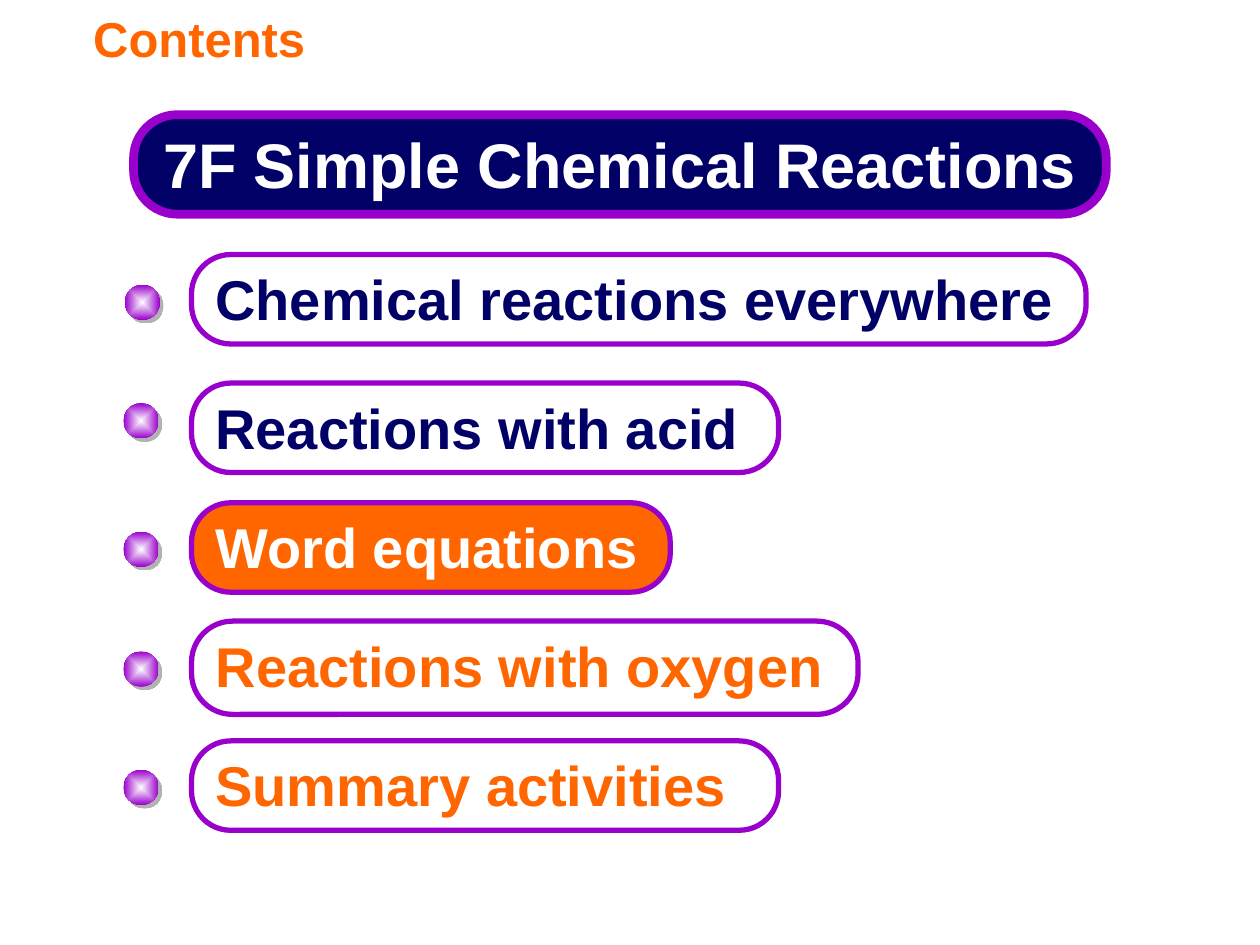
from lxml import etree
from pptx import Presentation
from pptx.dml.color import RGBColor
from pptx.enum import shapes, text
from pptx.oxml import ns
from pptx.util import Inches, Pt

NAVY = RGBColor(0x01, 0x00, 0x66)
PURPLE = RGBColor(0x99, 0x00, 0xCC)
ORANGE = RGBColor(0xFF, 0x66, 0x00)
WHITE = RGBColor(0xFF, 0xFF, 0xFF)
SHADOW = RGBColor(0xB2, 0xB2, 0xB2)

TOPIC_LEFT = 1.52
BULLET_SIZE = 0.28
TOPICS = [
    ("Chemical reactions everywhere", 2.02, 7.1, 0.71, NAVY, None, 0.99, 2.26),
    ("Reactions with acid", 3.04, 4.66, 0.71, NAVY, None, 0.98, 3.2),
    ("Word equations", 3.99, 3.8, 0.71, WHITE, ORANGE, 0.98, 4.22),
    ("Reactions with oxygen", 4.93, 5.29, 0.74, ORANGE, None, 0.98, 5.17),
    ("Summary activities", 5.88, 4.66, 0.71, ORANGE, None, 0.98, 6.11),
]


def add_child(parent, tag, **attributes):
    return etree.SubElement(parent, ns.qn(tag), attributes)


def write_line(frame, wording, size, color, **paragraph_format):
    frame.word_wrap = True
    line = frame.paragraphs[0]
    for name, value in paragraph_format.items():
        setattr(line, name, value)
    run = line.add_run()
    run.text = wording
    for name, value in {"name": "Arial", "size": Pt(size), "bold": True}.items():
        setattr(run.font, name, value)
    run.font.color.rgb = color


def add_heading(slide, wording):
    heading = slide.shapes.add_textbox(0, 0, Inches(7.13), Inches(0.6))
    frame = heading.text_frame
    frame.margin_left = Inches(0.74)
    frame.vertical_anchor = text.MSO_ANCHOR.MIDDLE
    write_line(frame, wording, 28, ORANGE)


def add_panel(slide, wording, box, size, color, fill, border, align):
    panel = slide.shapes.add_shape(
        shapes.MSO_SHAPE.ROUNDED_RECTANGLE, *map(Inches, box))
    panel.shadow.inherit = False
    panel.adjustments[0] = 0.44
    if fill is None:
        panel.fill.background()
    else:
        panel.fill.solid()
        panel.fill.fore_color.rgb = fill
    panel.line.color.rgb = PURPLE
    panel.line.width = Pt(border)
    panel.text_frame.vertical_anchor = text.MSO_ANCHOR.TOP
    write_line(panel.text_frame, wording, size, color,
               alignment=align, line_spacing=0.9)


def add_bullet(slide, left, top):
    bullet = slide.shapes.add_shape(
        shapes.MSO_SHAPE.OVAL,
        *map(Inches, (left, top, BULLET_SIZE, BULLET_SIZE)))
    bullet.line.fill.background()
    bullet.fill.gradient()
    for stop, color in zip(bullet.fill.gradient_stops, (WHITE, PURPLE)):
        stop.color.rgb = color
    properties = bullet.element.spPr
    gradient = properties.find(ns.qn("a:gradFill"))
    gradient.remove(gradient.find(ns.qn("a:lin")))
    radial = add_child(gradient, "a:path", path="shape")
    add_child(radial, "a:fillToRect", l="50000", t="50000", r="50000", b="50000")

    bullet.shadow.inherit = False
    effects = properties.find(ns.qn("a:effectLst"))
    shadow = add_child(effects, "a:outerShdw", dist=str(Pt(2.8)),
                       dir=str(45 * 60000), algn="ctr", rotWithShape="0")
    add_child(shadow, "a:srgbClr", val=str(SHADOW))


def main():
    deck = Presentation()
    deck.slide_width, deck.slide_height = Inches(10), Inches(7.5)
    slide = deck.slides.add_slide(deck.slide_layouts[6])
    add_heading(slide, "Contents")
    add_panel(slide, "7F Simple Chemical Reactions", (1.06, 0.91, 7.72, 0.79),
              36, WHITE, NAVY, 5, text.PP_ALIGN.CENTER)
    for topic, top, width, height, color, fill, bullet_left, bullet_top in TOPICS:
        add_bullet(slide, bullet_left, bullet_top)
        add_panel(slide, topic, (TOPIC_LEFT, top, width, height),
                  32, color, fill, 3, text.PP_ALIGN.LEFT)
    deck.save("out.pptx")


if __name__ == "__main__":
    main()
